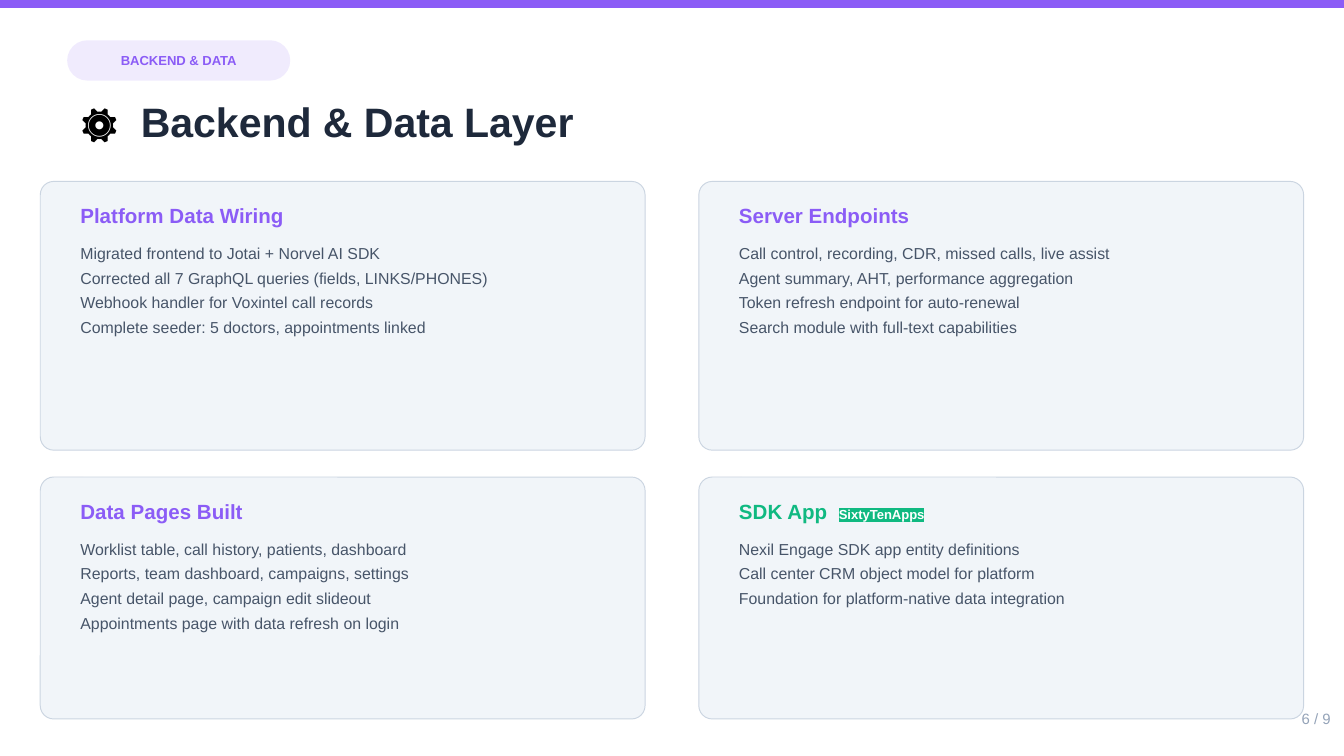
from dataclasses import dataclass

from lxml.etree import SubElement
from pptx import Presentation
from pptx.dml.color import RGBColor
from pptx.enum.shapes import MSO_SHAPE
from pptx.enum.text import MSO_ANCHOR, PP_ALIGN
from pptx.oxml import parse_xml
from pptx.oxml.ns import nsdecls, qn
from pptx.util import Pt


@dataclass(frozen=True)
class Theme:
    font: str = "Arial"
    accent: str = "8B5CF6"
    green: str = "10B981"
    ink: str = "1E293B"
    icon: str = "000000"
    body: str = "475569"
    muted: str = "94A3B8"
    white: str = "FFFFFF"
    card: str = "F1F5F9"
    border: str = "CBD5E1"
    title_size: float = 22
    heading_size: float = 11
    body_size: float = 8.5
    page_size: float = 8
    tag_size: float = 7


T = Theme()


@dataclass(frozen=True)
class Box:
    x: float
    y: float
    w: float
    h: float

    def lengths(self) -> tuple:
        return Pt(self.x), Pt(self.y), Pt(self.w), Pt(self.h)


@dataclass(frozen=True)
class Span:
    text: str
    size: float
    color: str
    bold: bool = False
    highlight: str = ""


@dataclass(frozen=True)
class Card:
    heading: str
    lines: tuple[str, ...]
    color: str = T.accent
    badge: str = ""


CARDS = (
    Card("Platform Data Wiring", (
        "Migrated frontend to Jotai + Norvel AI SDK",
        "Corrected all 7 GraphQL queries (fields, LINKS/PHONES)",
        "Webhook handler for Voxintel call records",
        "Complete seeder: 5 doctors, appointments linked",
    )),
    Card("Server Endpoints", (
        "Call control, recording, CDR, missed calls, live assist",
        "Agent summary, AHT, performance aggregation",
        "Token refresh endpoint for auto-renewal",
        "Search module with full-text capabilities",
    )),
    Card("Data Pages Built", (
        "Worklist table, call history, patients, dashboard",
        "Reports, team dashboard, campaigns, settings",
        "Agent detail page, campaign edit slideout",
        "Appointments page with data refresh on login",
    )),
    Card("SDK App", (
        "Nexil Engage SDK app entity definitions",
        "Call center CRM object model for platform",
        "Foundation for platform-native data integration",
    ), T.green, "SixtyTenApps"),
)
COLUMNS = (21.6, 374.4)
ROWS = ((97.2, 144), (255.6, 129.6))
CARD_WIDTH = 324
CARD_RADIUS = 7.2
PAD = 14.4


def add_panel(s, box: Box, fill: str, radius: float = 0, line: str = "", alpha: int = 100):
    """Draw a filled rectangle; alpha is the opacity in percent."""
    kind = MSO_SHAPE.ROUNDED_RECTANGLE if radius else MSO_SHAPE.RECTANGLE
    sp = s.shapes.add_shape(kind, *box.lengths())
    sp.shadow.inherit = False
    if radius:
        sp.adjustments[0] = radius / box.h
    sp.fill.solid()
    sp.fill.fore_color.rgb = RGBColor.from_string(fill)
    if alpha < 100:
        color = sp._element.spPr.find(qn("a:solidFill"))[0]
        SubElement(color, qn("a:alpha")).set("val", str(alpha * 1000))
    if line:
        sp.line.color.rgb = RGBColor.from_string(line)
        sp.line.width = Pt(0.5)
    else:
        sp.line.fill.background()


def add_frame(s, box: Box, anchor=MSO_ANCHOR.MIDDLE):
    tf = s.shapes.add_textbox(*box.lengths()).text_frame
    tf.word_wrap = True
    tf.vertical_anchor = anchor
    return tf


def style_run(r, span: Span) -> None:
    r.font.size = Pt(span.size)
    r.font.bold = span.bold
    r.font.color.rgb = RGBColor.from_string(span.color)
    r.font.name = T.font
    if span.highlight:
        r._r.rPr.find(qn("a:latin")).addprevious(parse_xml(
            f'<a:highlight {nsdecls("a")}><a:srgbClr val="{span.highlight}"/></a:highlight>'))


def add_line(s, box: Box, *spans: Span, align=PP_ALIGN.LEFT, tab: float = 0) -> None:
    """Write one line of spans; tab is the stop, in points, used by tab characters."""
    p = add_frame(s, box).paragraphs[0]
    p.alignment = align
    if tab:
        stops = SubElement(p._p.get_or_add_pPr(), qn("a:tabLst"))
        SubElement(stops, qn("a:tab"), pos=str(Pt(tab)), algn="l")
    for span in spans:
        r = p.add_run()
        r.text = span.text
        style_run(r, span)


def add_body(s, box: Box, lines: tuple[str, ...]) -> None:
    tf = add_frame(s, box, MSO_ANCHOR.TOP)
    tf.text = "\n".join(lines)
    for p in tf.paragraphs:
        p.line_spacing = 1.1
        p.space_after = Pt(2)
        style_run(p.runs[0], Span(p.text, T.body_size, T.body))


def add_card(s, box: Box, card: Card) -> None:
    add_panel(s, box, T.card, CARD_RADIUS, T.border)
    x, w = box.x + PAD, box.w - 2 * PAD
    heading_box = Box(x, box.y + 5.76, w, 25.2)
    heading = Span(card.heading, T.heading_size, card.color, True)
    if card.badge:
        heading = Span(card.heading + "\t", T.heading_size, card.color, True)
        badge = Span(card.badge, T.tag_size, T.white, True, card.color)
        add_line(s, heading_box, heading, badge, tab=53.5)
    else:
        add_line(s, heading_box, heading)
    add_body(s, Box(x, box.y + 28.8, w, box.h - 36), card.lines)


def main() -> None:
    prs = Presentation()
    prs.slide_width, prs.slide_height = Pt(720), Pt(405)
    s = prs.slides.add_slide(prs.slide_layouts[6])

    add_panel(s, Box(0, 0, 720, 4.32), T.accent)
    tag = Box(36, 21.6, 119.52, 21.6)
    add_panel(s, tag, T.accent, tag.h / 2, alpha=12)
    add_line(s, tag, Span("BACKEND & DATA", T.tag_size, T.accent, True), align=PP_ALIGN.CENTER)
    add_line(s, Box(36, 46.8, 648, 36),
             Span("⚙\t", T.title_size, T.icon),
             Span("Backend & Data Layer", T.title_size, T.ink, True), tab=32.4)

    for i, card in enumerate(CARDS):
        top, height = ROWS[i // 2]
        add_card(s, Box(COLUMNS[i % 2], top, CARD_WIDTH, height), card)

    add_line(s, Box(633.6, 374.4, 86.4, 21.6),
             Span("6 / 9", T.page_size, T.muted), align=PP_ALIGN.RIGHT)
    prs.save("out.pptx")


if __name__ == "__main__":
    main()
